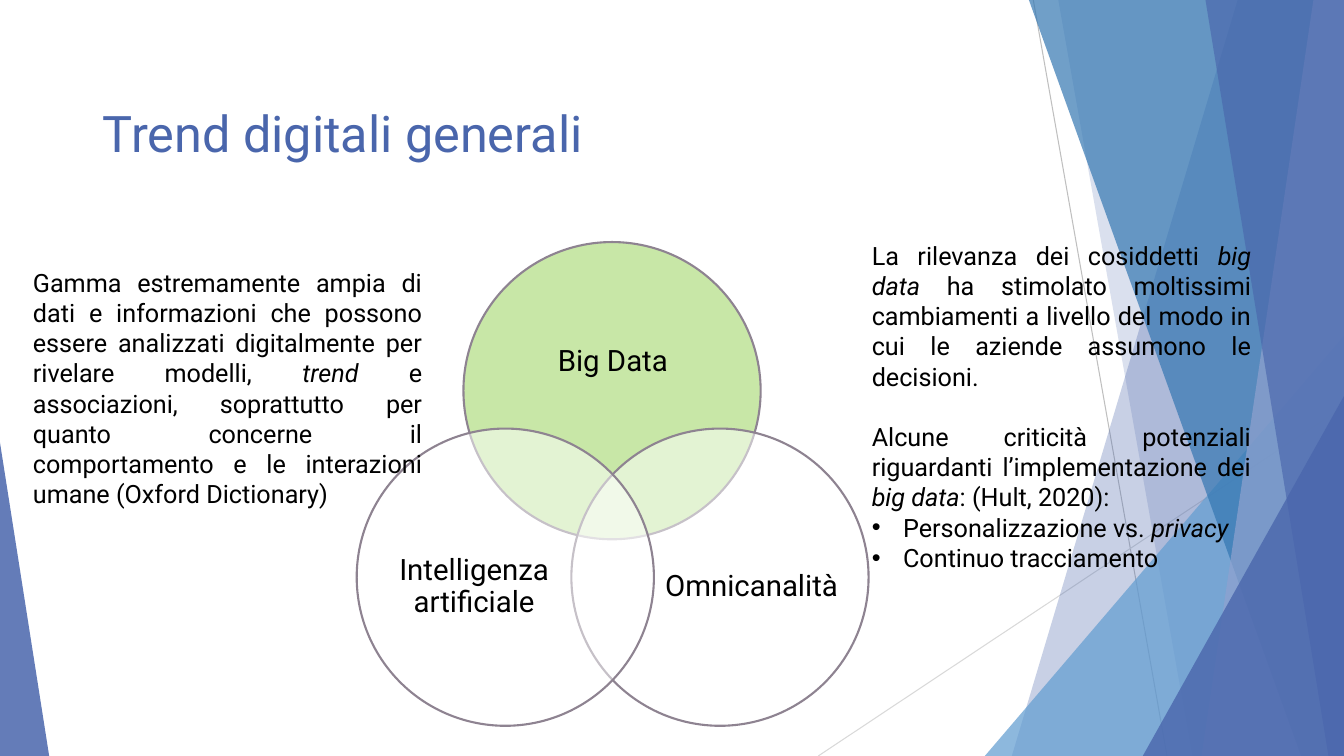
from lxml import etree
from pptx import Presentation
from pptx.dml.color import RGBColor
from pptx.enum.shapes import MSO_CONNECTOR, MSO_SHAPE
from pptx.enum.text import MSO_ANCHOR, PP_ALIGN
from pptx.oxml.ns import qn
from pptx.util import Cm, Pt

OVAL, TRIANGLE = MSO_SHAPE.OVAL, MSO_SHAPE.ISOSCELES_TRIANGLE
STRAIGHT = MSO_CONNECTOR.STRAIGHT
TOP, MIDDLE = MSO_ANCHOR.TOP, MSO_ANCHOR.MIDDLE
LEFT, CENTER, JUSTIFY = PP_ALIGN.LEFT, PP_ALIGN.CENTER, PP_ALIGN.JUSTIFY

COLORS = {
    "text": "000000", "white": "FFFFFF", "green": "92D050", "ring": "8E8391",
    "indigo": "4A66AC", "sky": "629DD1", "ocean": "3477B2", "lilac": "90A2CF",
    "gray": "BFBFBF", "pale": "D9D9D9",
}
FONT = "Roboto"
WIDTH, HEIGHT = 33.87, 19.05

TITLE = "Trend digitali generali"
TITLE_PLACE = (2.34, 2.44, 27.28, 3.68)

RULES = [
    ((26.04, 0), (29.41, HEIGHT), "gray"),
    ((WIDTH, 10.24), (20.62, HEIGHT), "pale"),
]
# kind, geometry, colour, opacity
DECOR = [
    ("strip", (31.19, 25.5), "indigo", 30),
    ("strip", (26.67, 30.05), "indigo", 20),
    ("triangle", (24.82, 8.46, WIDTH, 1), "sky", 72),
    ("strip", (25.93, 32.79), "ocean", 70),
    ("strip", (33.1, 30.28), "lilac", 70),
    ("strip", (30.38, 33.48), "indigo", 65),
    ("triangle", (28.8, 9.98, WIDTH, 1), "indigo", 80),
    ("triangle", (0, 11.15, 1.24, 0), "indigo", 85),
]

DIAMETER = 7.49
VENN = [
    ("Big Data", (11.68, 6.1), "green", (12.7, 7.42, 5.49, 3.38)),
    ("Omnicanalità", (14.4, 10.8), "white", (16.69, 12.73, 4.5, 4.11)),
    ("Intelligenza artificiale", (8.99, 10.8), "white", (9.7, 12.73, 4.5, 4.11)),
]

INDENT = 0.79
PLAIN, SPACED, BULLET = "plain", "spaced", "bullet"
NOTES = [
    ((0.58, 6.6, 10.31, 6.4), [
        (PLAIN, [
            ("Gamma estremamente ampia di dati e informazioni che possono essere "
             "analizzati digitalmente per rivelare modelli, ", False),
            ("trend", True),
            (" e associazioni, soprattutto per quanto concerne il comportamento "
             "e le interazioni umane (Oxford Dictionary)", False)]),
    ]),
    ((21.72, 5.92, 10.06, 9.5), [
        (PLAIN, [
            ("La rilevanza dei cosiddetti ", False), ("big data", True),
            (" ha stimolato moltissimi cambiamenti a livello del modo in cui "
             "le aziende assumono le decisioni.", False)]),
        (SPACED, [
            ("Alcune criticità potenziali riguardanti l’implementazione dei ", False),
            ("big data", True), (": (Hult, 2020):", False)]),
        (BULLET, [("Personalizzazione vs. ", False), ("privacy", True)]),
        (BULLET, [("Continuo tracciamento", False)]),
    ]),
]


def color(name):
    return RGBColor.from_string(COLORS[name])


def lengths(values):
    return [Cm(value) for value in values]


def apply(target, values):
    for name, value in values.items():
        setattr(target, name, value)


def paint(shape, name, opacity):
    shape.shadow.inherit = False
    shape.fill.solid()
    shape.fill.fore_color.rgb = color(name)
    tint = shape.fill._xPr.find(".//" + qn("a:srgbClr"))
    etree.SubElement(tint, qn("a:alpha")).set("val", str(opacity * 1000))


def write(para, spans, size, tone="text"):
    for text, italic in spans:
        span = para.add_run()
        span.text = text
        apply(span.font, {"name": FONT, "size": Pt(size), "italic": italic})
        span.font.color.rgb = color(tone)


def add_bullet(para):
    props = para._p.get_or_add_pPr()
    props.set("marL", str(Cm(INDENT)))
    props.set("indent", str(-Cm(INDENT)))
    etree.SubElement(props, qn("a:buFont")).set("typeface", "Arial")
    etree.SubElement(props, qn("a:buChar")).set("char", "•")


def add_rule(page, start, end, tone):
    rule = page.shapes.add_connector(STRAIGHT, *lengths(start + end))
    rule.line.color.rgb = color(tone)
    rule.line.width = Pt(0.75)
    etree.SubElement(rule._element.spPr, qn("a:effectLst"))


def add_decor(page, kind, geometry, tone, opacity):
    if kind == "strip":
        top_x, bottom_x = geometry
        builder = page.shapes.build_freeform(Cm(top_x), 0)
        corners = [(WIDTH, 0), (WIDTH, HEIGHT), (bottom_x, HEIGHT)]
        builder.add_line_segments([lengths(corner) for corner in corners], close=True)
        shape = builder.convert_to_shape()
    else:
        left, top, right, apex = geometry
        place = lengths((left, top, right - left, HEIGHT - top))
        shape = page.shapes.add_shape(TRIANGLE, *place)
        shape.adjustments[0] = apex
    paint(shape, tone, opacity)
    shape.line.fill.background()


def add_circle(page, label, corner, tone, label_place):
    circle = page.shapes.add_shape(OVAL, *lengths(corner + (DIAMETER, DIAMETER)))
    paint(circle, tone, 50)
    circle.line.color.rgb = color("ring")
    circle.line.width = Pt(1.5)
    frame = page.shapes.add_textbox(*lengths(label_place)).text_frame
    apply(frame, {"word_wrap": True, "vertical_anchor": MIDDLE, "margin_left": 0,
                  "margin_right": 0, "margin_top": 0, "margin_bottom": 0})
    para = frame.paragraphs[0]
    apply(para, {"alignment": CENTER, "line_spacing": 0.9})
    write(para, [(label, False)], 21)


def add_note(page, place, paragraphs):
    frame = page.shapes.add_textbox(*lengths(place)).text_frame
    frame.word_wrap = True
    for index, (style, spans) in enumerate(paragraphs):
        para = frame.add_paragraph() if index else frame.paragraphs[0]
        para.alignment = JUSTIFY
        if style == SPACED:
            para.space_before = Pt(21.6)
        if style == BULLET:
            add_bullet(para)
        write(para, spans, 18)


def main():
    deck = Presentation()
    apply(deck, {"slide_width": Cm(WIDTH), "slide_height": Cm(HEIGHT)})
    page = deck.slides.add_slide(deck.slide_layouts[5])

    for rule in RULES:
        add_rule(page, *rule)
    for piece in DECOR:
        add_decor(page, *piece)
    for circle in VENN:
        add_circle(page, *circle)
    for note in NOTES:
        add_note(page, *note)

    title = page.shapes.title
    apply(title, dict(zip(("left", "top", "width", "height"), lengths(TITLE_PLACE))))
    apply(title.text_frame, {"vertical_anchor": TOP, "word_wrap": True})
    heading = title.text_frame.paragraphs[0]
    heading.alignment = LEFT
    write(heading, [(TITLE, False)], 36, "indigo")

    deck.save("out.pptx")


if __name__ == "__main__":
    main()
